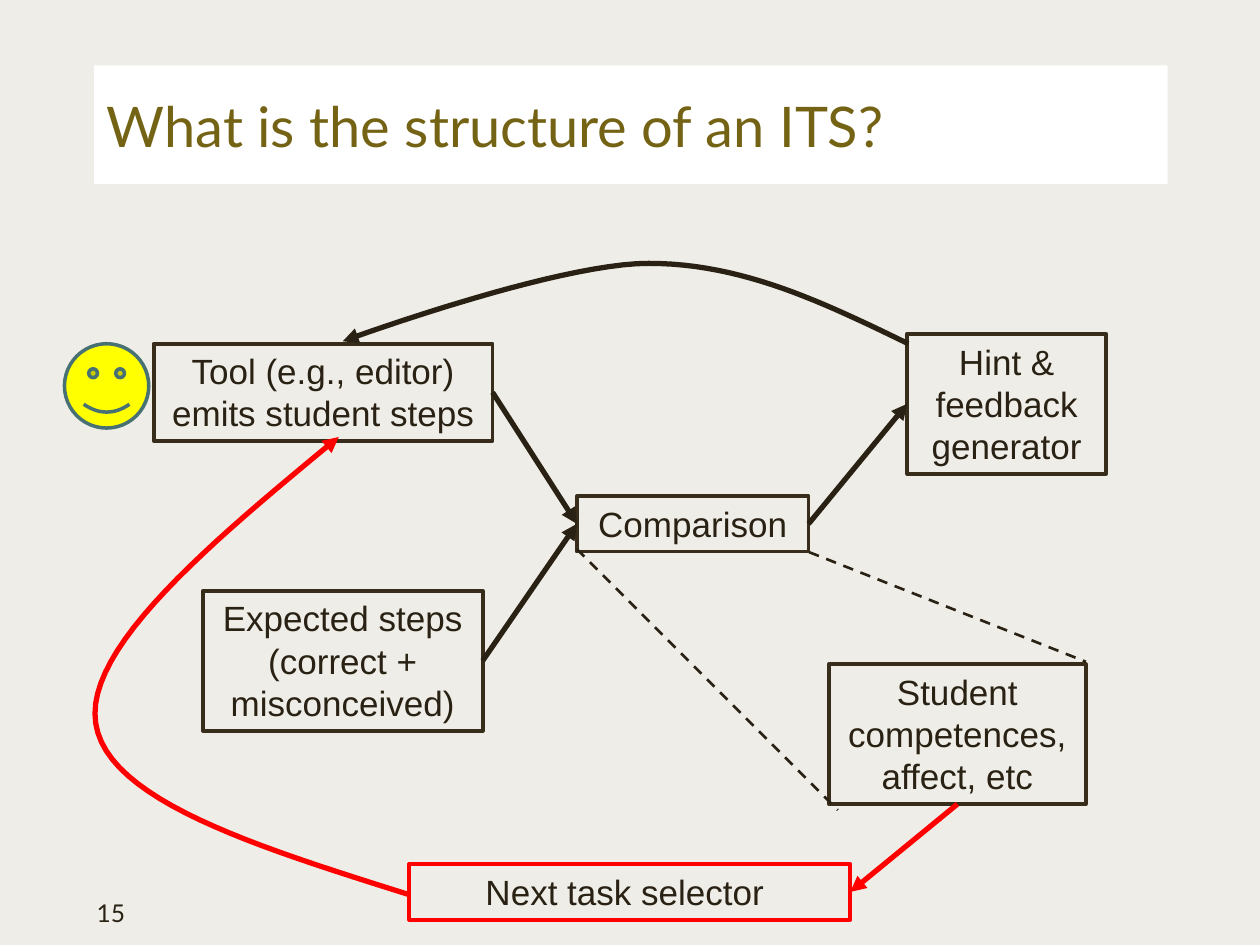
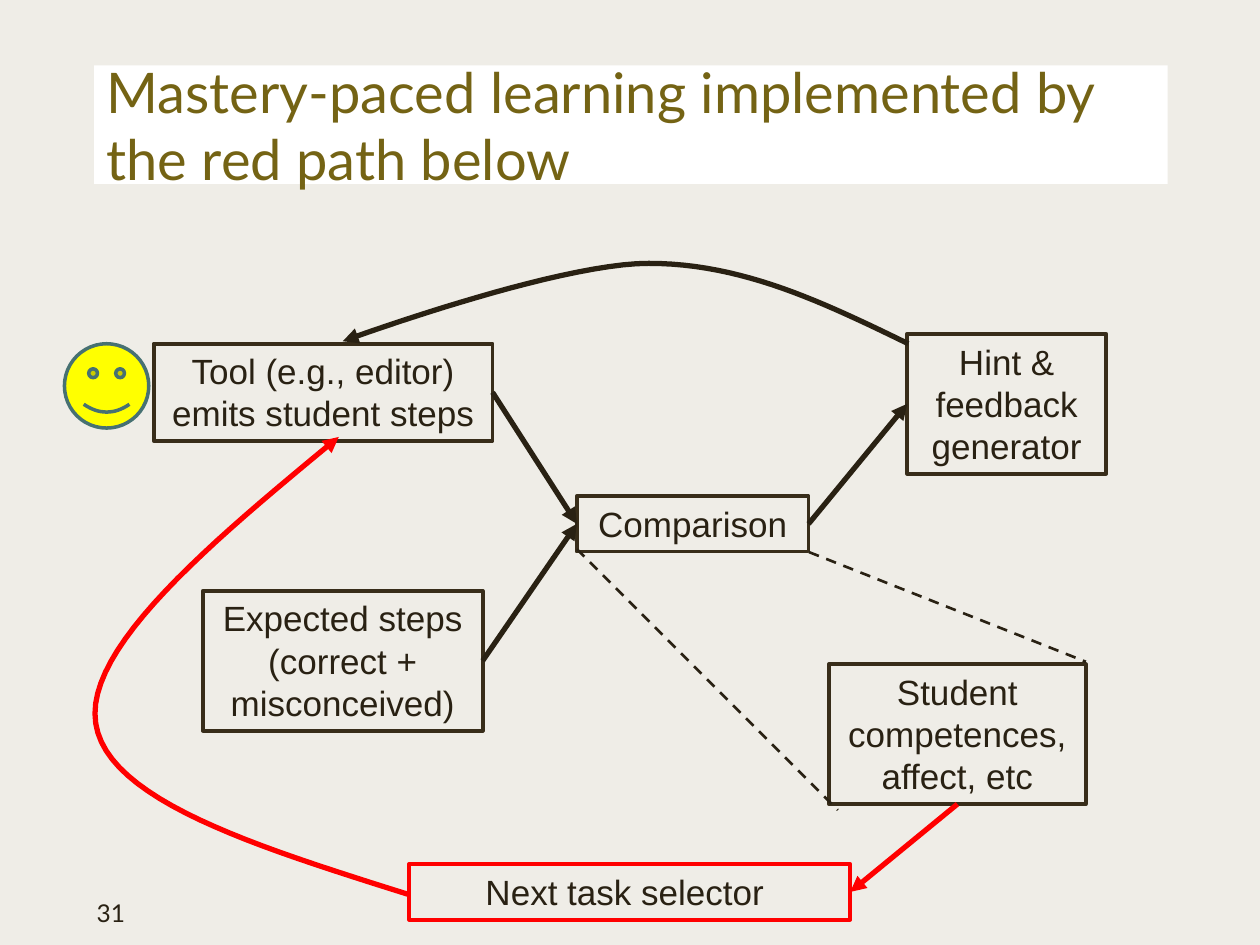
import dataclasses

import lxml.etree
import pptx
import pptx.dml.color
import pptx.enum.dml
import pptx.enum.shapes
import pptx.enum.text
import pptx.oxml.ns
import pptx.util

Cm = pptx.util.Cm
Pt = pptx.util.Pt
Kind = pptx.enum.shapes.MSO_SHAPE
Anchor = pptx.enum.text.MSO_ANCHOR
Align = pptx.enum.text.PP_ALIGN
Fit = pptx.enum.text.MSO_AUTO_SIZE


@dataclasses.dataclass(frozen=True)
class Theme:
    back: str = "EFEDE7"
    band: str = "FFFFFF"
    title: str = "746314"
    ink: str = "292113"
    edge: str = "382D1A"
    red: str = "FF0000"
    face: str = "FFFF00"
    rim: str = "477172"
    head: str = "Lato"
    body: str = "Arial"
    big: int = 32
    mid: int = 20
    small: int = 14


LOOK = Theme()
DASH = pptx.enum.dml.MSO_LINE.DASH

TITLES = [
    ("What is the structure of an ITS?", 15),
    ("Mastery-paced learning implemented by the red path below", 31),
]

BOXES = {
    "tool": (["Tool (e.g., editor) emits student steps"],
             (3.1, 6.93, 6.83, 1.96), LOOK.edge),
    "expect": (["Expected steps", "(correct + misconceived)"],
               (4.09, 11.91, 5.64, 2.82), LOOK.edge),
    "compare": (["Comparison"], (11.63, 10, 4.67, 1.12), LOOK.edge),
    "hint": (["Hint & feedback generator"],
             (18.29, 6.73, 4.01, 2.82), LOOK.edge),
    "student": (["Student competences, affect, etc"],
                (16.71, 13.39, 5.18, 2.82), LOOK.edge),
    "next": (["Next task selector "], (8.25, 17.42, 8.89, 1.12), LOOK.red),
}

LINKS = [
    ("tool", 3, "compare", 1, LOOK.ink),
    ("expect", 3, "compare", 1, LOOK.ink),
    ("compare", 3, "hint", 1, LOOK.ink),
    ("student", 2, "next", 3, LOOK.red),
]

GUIDES = [
    ((11.63, 11.07), (16.89, 16.33)),
    ((16.31, 11.13), (21.89, 13.34)),
]

CURVES = [
    ([(18.31, 6.93), (16.64, 6.12), (14.99, 5.31), (13.08, 5.31),
      (11.18, 5.31), (6.91, 6.88), (6.91, 6.88)], LOOK.ink),
    ([(8.23, 18.03), (5.18, 17.07), (2.16, 16.13), (1.93, 14.58),
      (1.7, 13.06), (4.27, 10.92), (6.83, 8.81)], LOOK.red),
]


def put(item, **vals):
    for key, val in vals.items():
        setattr(item, key, val)


def tint(code):
    return pptx.dml.color.RGBColor.from_string(code)


def fill(item, code):
    item.fill.solid()
    item.fill.fore_color.rgb = tint(code)


def add_tag(root, name, **vals):
    return lxml.etree.SubElement(root, pptx.oxml.ns.qn(name), **vals)


def stroke(item, code, width, arrow=False, **vals):
    item.line.color.rgb = tint(code)
    put(item.line, width=Pt(width), **vals)
    if arrow:
        add_tag(item.line._get_or_add_ln(), "a:tailEnd", type="triangle")


def write(item, lines, size, face, code, align=Align.LEFT, **vals):
    frame = item.text_frame
    put(frame, word_wrap=True, **vals)
    frame.text = "\n".join(lines)
    for para in frame.paragraphs:
        para.alignment = align
        put(para.font, size=Pt(size), name=face)
        para.font.color.rgb = tint(code)


def add_form(slide, kind, place):
    form = slide.shapes.add_shape(kind, *map(Cm, place))
    form.shadow.inherit = False
    return form


def add_head(slide, text, page):
    band = add_form(slide, Kind.RECTANGLE, (1.9, 1.32, 21.64, 2.39))
    fill(band, LOOK.band)
    band.line.fill.background()
    write(band, [text], LOOK.big, LOOK.head, LOOK.title,
          vertical_anchor=Anchor.MIDDLE)
    note = slide.shapes.add_textbox(*map(Cm, (1.7, 17.98, 2.54, 0.64)))
    write(note, [str(page)], LOOK.small, LOOK.head, LOOK.ink)


def add_box(slide, lines, place, code):
    box = add_form(slide, Kind.RECTANGLE, place)
    box.fill.background()
    stroke(box, code, 2.25)
    write(box, lines, LOOK.mid, LOOK.body, LOOK.ink, Align.CENTER,
          vertical_anchor=Anchor.TOP, auto_size=Fit.SHAPE_TO_FIT_TEXT)
    return box


def add_line(slide, start=(0, 0), end=(0, 0)):
    line = slide.shapes.add_connector(
        pptx.enum.shapes.MSO_CONNECTOR.STRAIGHT, *map(Cm, start + end))
    add_tag(line._element.spPr, "a:effectLst")
    return line


def add_link(slide, first, out, last, into, code):
    link = add_line(slide)
    link.begin_connect(first, out)
    link.end_connect(last, into)
    stroke(link, code, 3, arrow=True)


def blend(knots, part):
    while len(knots) > 1:
        knots = [tuple(a + (b - a) * part for a, b in zip(*pair))
                 for pair in zip(knots, knots[1:])]
    return knots[0]


def add_curve(slide, knots, code, steps=24):
    dots = [blend(knots[pos:pos + 4], step / steps)
            for pos in range(0, len(knots) - 1, 3)
            for step in range(1, steps + 1)]
    pen = slide.shapes.build_freeform(*map(Cm, knots[0]))
    pen.add_line_segments([tuple(map(Cm, dot)) for dot in dots], close=False)
    curve = pen.convert_to_shape()
    curve.shadow.inherit = False
    curve.fill.background()
    stroke(curve, code, 3, arrow=True)


def add_face(slide):
    face = add_form(slide, Kind.SMILEY_FACE, (1.3, 6.93, 1.7, 1.7))
    fill(face, LOOK.face)
    stroke(face, LOOK.rim, 2)


def add_chain(slide):
    boxes = {key: add_box(slide, *vals) for key, vals in BOXES.items()}
    for first, out, last, into, code in LINKS:
        add_link(slide, boxes[first], out, boxes[last], into, code)
    for start, end in GUIDES:
        stroke(add_line(slide, start, end), LOOK.ink, 1.5, dash_style=DASH)
    add_face(slide)
    for knots, code in CURVES:
        add_curve(slide, knots, code)


def main():
    deck = pptx.Presentation()
    put(deck, slide_width=Cm(25.4), slide_height=Cm(19.05))
    for text, page in TITLES:
        slide = deck.slides.add_slide(deck.slide_layouts[6])
        fill(slide.background, LOOK.back)
        add_head(slide, text, page)
        add_chain(slide)
    deck.save("out.pptx")


if __name__ == "__main__":
    main()
